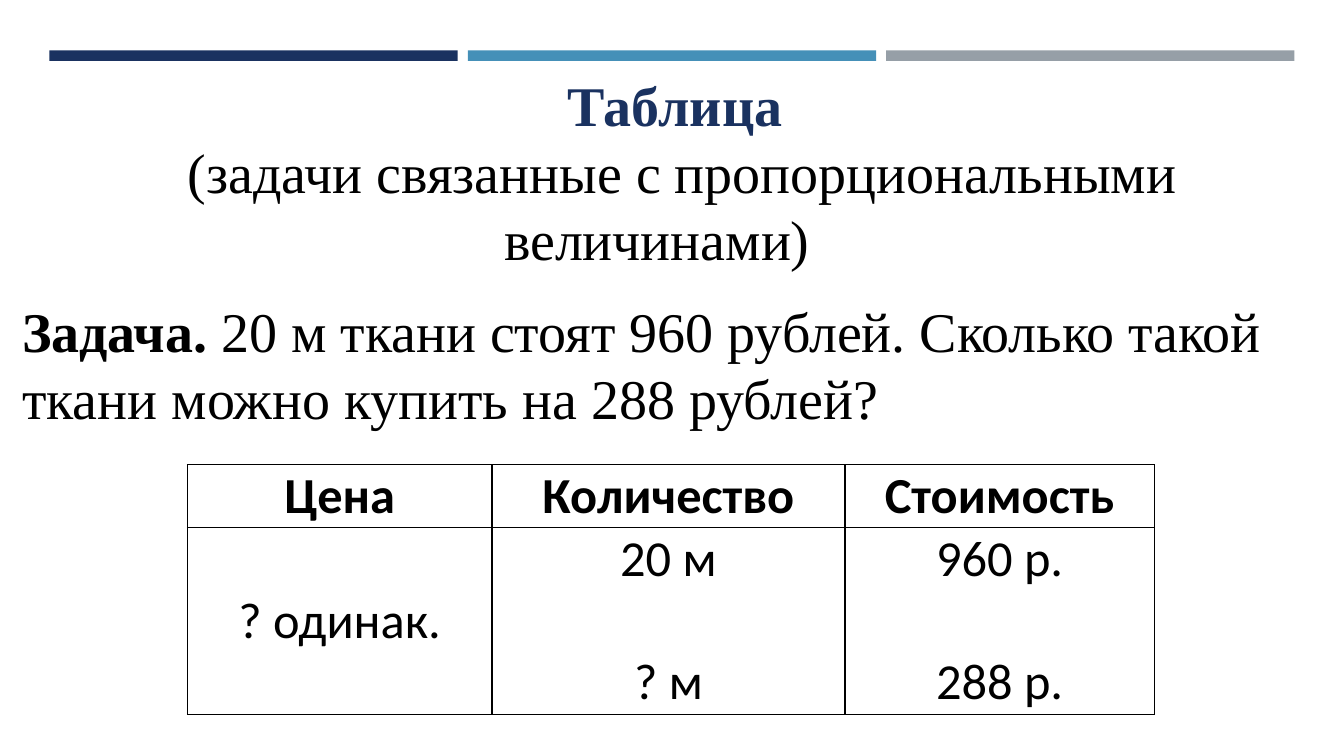
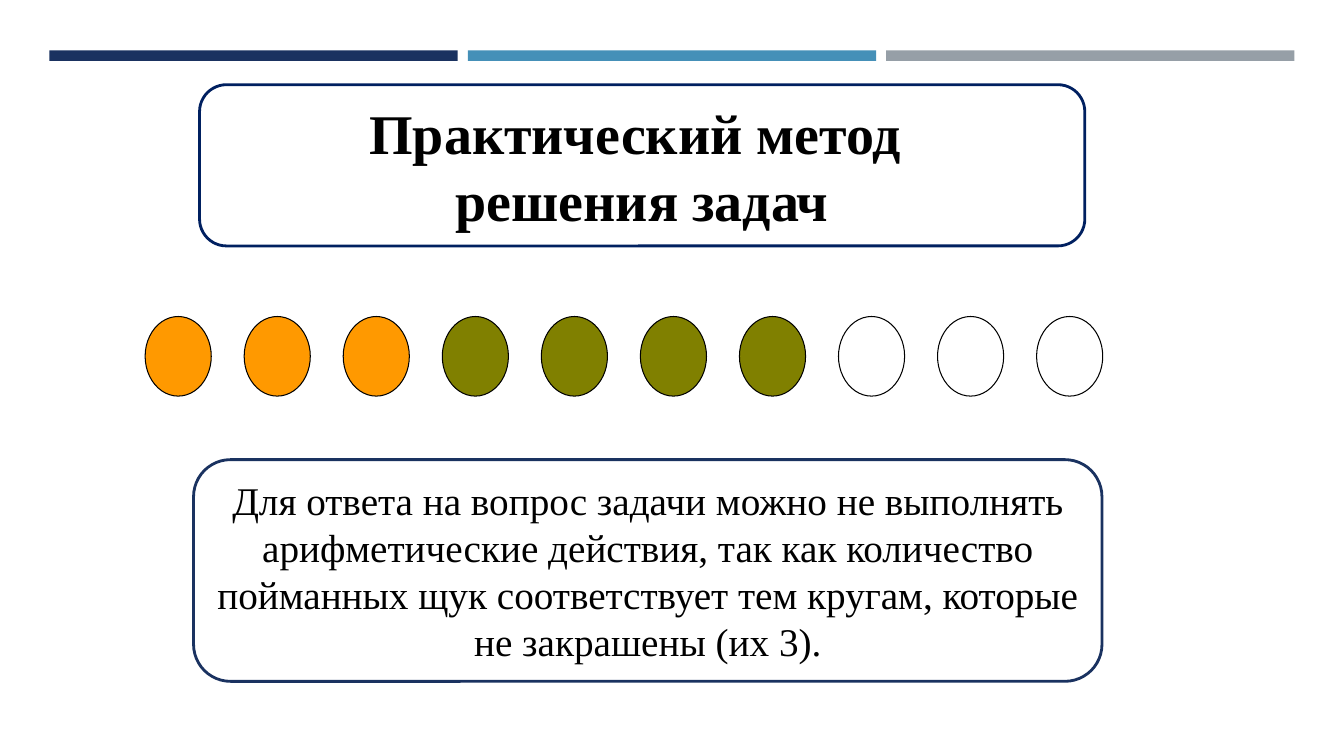
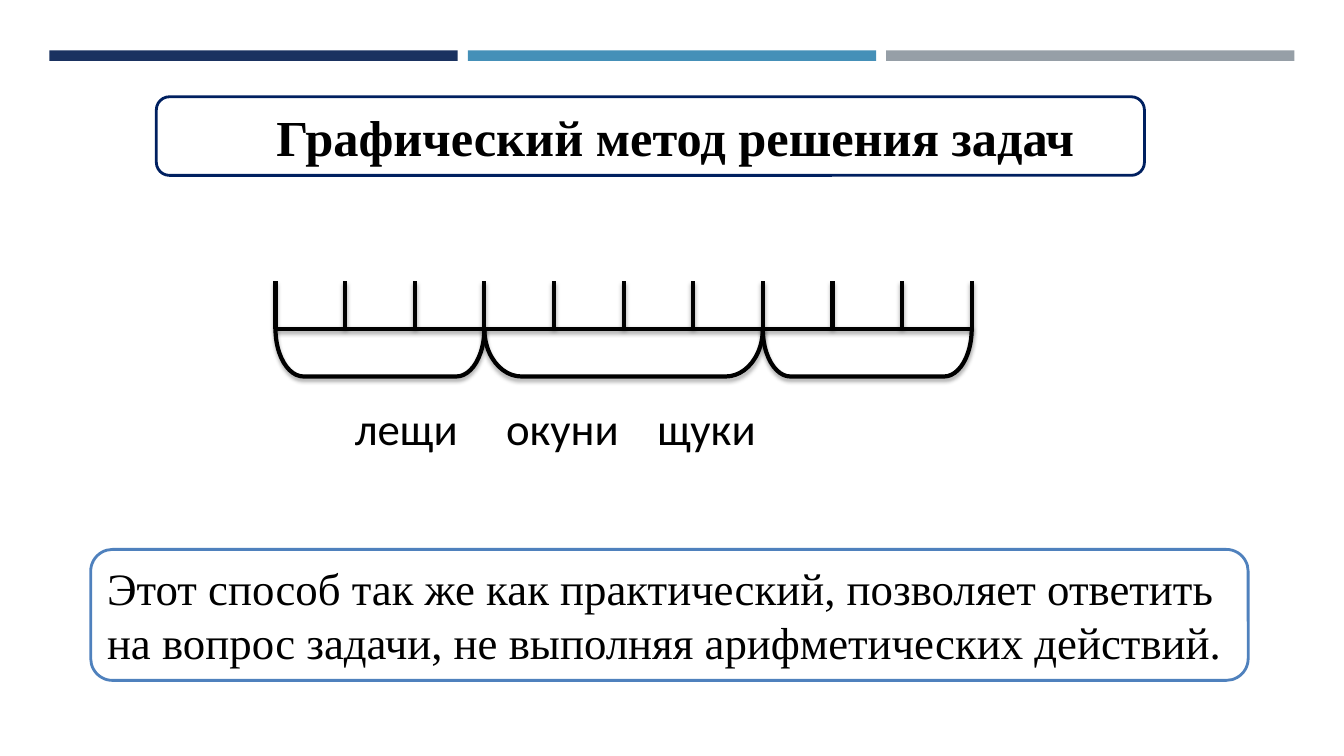
from lxml import etree
from pptx import Presentation
from pptx import util as u
from pptx.dml.color import RGBColor
from pptx.enum import shapes, text
from pptx.oxml import ns

SERIF, SANS = "Times New Roman", "Calibri"
NAVY, BLUE, GREY = "1A3260", "4590B8", "969FA7"
FRAME, SKY = "002060", "4F81BD"
ORANGE, OLIVE = "FF9900", "808000"
BLACK, WHITE = "000000", "FFFFFF"
KIND = shapes.MSO_SHAPE
MID, LEFT = text.PP_ALIGN.CENTER, text.PP_ALIGN.LEFT


def color(code):
    return RGBColor.from_string(code)


def node(parent, tag, **attrs):
    """Append a drawing element with the given attributes."""
    child = etree.SubElement(parent, ns.qn("a:" + tag))
    for key, val in attrs.items():
        child.set(key, str(val))
    return child


class Deck:
    """Style and current slide; lengths are percent of the slide's size."""

    def __init__(self):
        self.prs = Presentation()
        self.prs.slide_width = u.Inches(13.33)
        self.prs.slide_height = u.Inches(7.5)
        self.slide = None

    def x(self, part):
        return round(self.prs.slide_width * part / 100)

    def y(self, part):
        return round(self.prs.slide_height * part / 100)

    def area(self, left, top, wide, tall):
        return self.x(left), self.y(top), self.x(wide), self.y(tall)

    def start(self, layout):
        self.slide = self.prs.slides.add_slide(self.prs.slide_layouts[layout])

    def bands(self):
        """Draw the three top bands and hand them to the slide master."""
        tree = self.prs.slide_master.element.cSld.spTree
        for i, code in enumerate((NAVY, BLUE, GREY)):
            band = self.shape(KIND.RECTANGLE, (3.68 + 31.13 * i, 6.67, 30.38, 1.4), code)
            band.element.nvSpPr.cNvPr.set("id", str(100 + i))
            tree.append(band.element)

    def shape(self, kind, box, fill=None, line=None, width=2):
        item = self.slide.shapes.add_shape(kind, *self.area(*box))
        item.shadow.inherit = False
        if fill:
            item.fill.solid()
            item.fill.fore_color.rgb = color(fill)
        else:
            item.fill.background()
        if line:
            item.line.color.rgb = color(line)
            item.line.width = u.Pt(width)
        else:
            item.line.fill.background()
        return item

    def words(self, frame, paras, size, font=SERIF, align=MID, indent=0, gap=0, tabs=()):
        """Fill a frame; each paragraph is a list of (words, bold, colour) runs."""
        frame.word_wrap = True
        frame.auto_size = text.MSO_AUTO_SIZE.NONE
        for i, runs in enumerate(paras):
            para = frame.paragraphs[0] if i == 0 else frame.add_paragraph()
            para.alignment = align
            para.space_before = u.Pt(gap if i else 0)
            props = para._p.get_or_add_pPr()
            props.set("marL", "0")
            props.set("indent", str(u.Inches(indent)))
            node(props, "buNone")
            if tabs:
                stops = node(props, "tabLst")
                for part in tabs:
                    node(stops, "tab", pos=self.x(part), algn="l")
            for words, bold, code in runs:
                run = para.add_run()
                run.text = words
                run.font.name = font
                run.font.size = u.Pt(size)
                run.font.bold = bold
                run.font.color.rgb = color(code)

    def holder(self, item, box, paras, size, **style):
        """Move a placeholder to the box, in front, and fill it."""
        item.left, item.top, item.width, item.height = self.area(*box)
        self.slide.shapes.element.append(item.element)
        self.words(item.text_frame, paras, size, **style)

    def title(self, box, paras, size, **style):
        self.holder(self.slide.shapes.title, box, paras, size, **style)

    def body(self, box, paras, size, **style):
        self.holder(self.slide.placeholders[1], box, paras, size, **style)

    def head(self, box, lines, size, **style):
        """Title inside a rounded frame."""
        self.shape(KIND.ROUNDED_RECTANGLE, box, WHITE, FRAME)
        self.title(box, [[(line, True, BLACK)] for line in lines], size, **style)

    def note(self, box, words, size, line, align=MID):
        item = self.shape(KIND.ROUNDED_RECTANGLE, box, WHITE, line)
        self.words(item.text_frame, [[(words, False, BLACK)]], size, align=align)

    def label(self, box, words, size, tabs):
        item = self.slide.shapes.add_textbox(*self.area(*box))
        self.words(item.text_frame, [[(words, False, BLACK)]], size,
                   font=SANS, align=LEFT, tabs=tabs)

    def shade(self, props):
        """Put a soft shadow below a line."""
        effects = props.find(ns.qn("a:effectLst"))
        if effects is None:
            effects = node(props, "effectLst")
        cast = node(effects, "outerShdw", blurRad=u.Pt(3.1), dist=u.Pt(1.8),
                    dir=90 * 60000, rotWithShape=0)
        node(node(cast, "srgbClr", val=BLACK), "alpha", val=35000)

    def line(self, left, top, right, low):
        item = self.slide.shapes.add_connector(
            shapes.MSO_CONNECTOR.STRAIGHT,
            self.x(left), self.y(top), self.x(right), self.y(low))
        item.line.color.rgb = color(BLACK)
        item.line.width = u.Pt(3)
        self.shade(item.element.spPr)

    def brace(self, left, top, wide, tall, bend):
        """Bracket that opens upward: a left bracket given a quarter turn."""
        item = self.shape(KIND.LEFT_BRACKET, (left, top, wide, tall), None, BLACK, 3)
        span, deep = item.width, item.height
        item.left += (span - deep) // 2
        item.top += (deep - span) // 2
        item.width, item.height = deep, span
        item.rotation = 270
        item.adjustments[0] = bend
        self.shade(item.element.spPr)

    def table(self, left, top, cols, rows, cells, size):
        """Ruled table; a cell is a list of lines, the first row is bold."""
        box = self.area(left, top, sum(cols), sum(rows))
        grid = self.slide.shapes.add_table(len(rows), len(cols), *box).table
        grid.first_row = grid.horz_banding = False
        for col, part in zip(grid.columns, cols):
            col.width = self.x(part)
        for r, part in enumerate(rows):
            grid.rows[r].height = self.y(part)
            for c, lines in enumerate(cells[r]):
                self.cell(grid.cell(r, c), lines, size, r == 0)

    def cell(self, cell, lines, size, bold):
        cell.margin_left = cell.margin_right = u.Inches(0.07)
        cell.margin_top = cell.margin_bottom = 0
        cell.vertical_anchor = text.MSO_ANCHOR.MIDDLE
        props = cell._tc.get_or_add_tcPr()
        for side in ("lnL", "lnR", "lnT", "lnB"):
            edge = node(props, side, w=u.Pt(1))
            node(node(edge, "solidFill"), "srgbClr", val=BLACK)
        cell.fill.solid()
        cell.fill.fore_color.rgb = color(WHITE)
        paras = [[(line, bold, BLACK)] for line in lines]
        self.words(cell.text_frame, paras, size, font=SANS, gap=size * 1.22)


def ratio(deck):
    deck.start(1)
    deck.bands()
    deck.title((2.48, 8.53, 92.8, 28.27), [
        [("Таблица ", True, NAVY)],
        [("(задачи связанные с пропорциональными величинами)", False, BLACK)],
    ], 40, indent=0.5)
    deck.body((0.9, 38.53, 95.87, 19.33), [[
        ("Задача. ", True, BLACK),
        ("20 м ткани стоят 960 рублей. Сколько такой ткани "
         "можно купить на 288 рублей?", False, BLACK),
    ]], 40, align=LEFT)
    deck.table(13.95, 61.47, (22.66, 26.26, 23.03), (8.27, 24.8), [
        [["Цена"], ["Количество"], ["Стоимость"]],
        [["? одинак."], ["20 м", "? м"], ["960 р.", "288 р."]],
    ], 36)


def circles(deck):
    deck.start(5)
    deck.head((14.85, 11.2, 65.87, 21.33), ["Практический метод ", "решения задач"], 40)
    fish = [ORANGE] * 3 + [OLIVE] * 4 + [WHITE] * 3
    for i, fill in enumerate(fish):
        deck.shape(KIND.OVAL, (10.8 + 7.37 * i, 41.87, 4.92, 10.53), fill, BLACK, 0.75)
    deck.note((14.4, 60.8, 67.59, 29.33),
              "Для ответа на вопрос задачи можно не выполнять арифметические "
              "действия, так как количество пойманных щук соответствует тем "
              "кругам, которые не закрашены (их 3).", 28, NAVY)


def scale(deck):
    deck.start(5)
    deck.head((11.63, 12.8, 73.52, 10.4), ["Графический метод решения задач"], 36, indent=0.5)
    left, step, top, base = 20.5, 5.18, 37.2, 43.5
    deck.line(left, base, left + 10 * step, base)
    for i in range(11):
        deck.line(left + i * step, top, left + i * step, base)
    for first, count, bend in ((0, 3, 0.59), (3, 4, 0.78), (7, 3, 0.58)):
        deck.brace(left + first * step, base, count * step, base - top, bend)
    deck.label((25.66, 52.4, 51.76, 8.53), "лещи\tокуни\tщуки", 32, (17.4, 33.5))
    deck.note((6.75, 72.67, 86.12, 17.33),
              "Этот способ так же как практический, позволяет ответить на вопрос "
              "задачи, не выполняя арифметических действий.", 32, SKY, LEFT)


def main():
    deck = Deck()
    for build in (ratio, circles, scale):
        build(deck)
    deck.prs.save("out.pptx")


if __name__ == "__main__":
    main()
